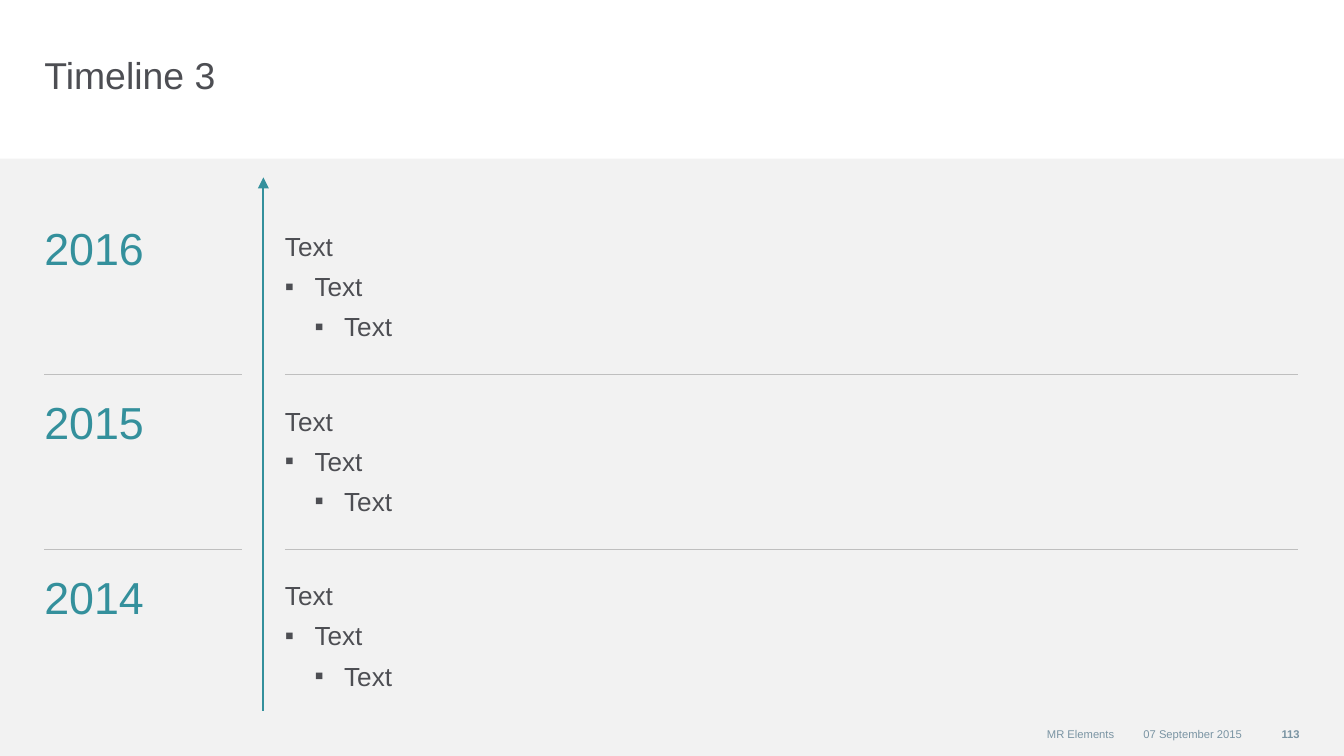
from lxml import etree
from pptx import Presentation
from pptx.dml.color import RGBColor
from pptx.enum.shapes import MSO_CONNECTOR, MSO_SHAPE
from pptx.enum.text import MSO_ANCHOR, MSO_AUTO_SIZE, PP_ALIGN
from pptx.oxml.ns import qn
from pptx.util import Inches, Pt

STRAIGHT = MSO_CONNECTOR.STRAIGHT
RECTANGLE = MSO_SHAPE.RECTANGLE
TOP, MIDDLE = MSO_ANCHOR.TOP, MSO_ANCHOR.MIDDLE
LEFT, RIGHT = PP_ALIGN.LEFT, PP_ALIGN.RIGHT
NO_FIT = MSO_AUTO_SIZE.NONE

WHITE = RGBColor(0xFF, 0xFF, 0xFF)
PANEL = RGBColor(0xF2, 0xF2, 0xF2)
INK = RGBColor(0x4D, 0x4E, 0x53)
TEAL = RGBColor(0x34, 0x90, 0x9C)
RULE = RGBColor(0xBF, 0xBF, 0xBF)
FOOTER = RGBColor(0x7A, 0x94, 0xA3)

WIDTH = 10
HEIGHT = WIDTH * 9 / 16
MARGIN, RIGHT_EDGE = 0.33, 9.66
LIST_LEFT, AXIS = 2.12, 1.96
FIRST_ROW, ROW_PITCH, ROW_HEIGHT = 1.59, 1.3, 1.1
INDENT = 0.22
YEARS = ["2016", "2015", "2014"]
ENTRY = ["Text", "Text", "Text"]
LIST_SLOTS = [1, 2, 3]
SPARE_SLOT = 4
COMPARISON_LAYOUT = 4


class TimelineSlide:
    font = "Arial"

    def __init__(self, slide):
        self.slide = slide
        self.slide.background.fill.solid()
        self.slide.background.fill.fore_color.rgb = WHITE

    def place(self, shape, box, insets, anchor=TOP):
        shape.left, shape.top, shape.width, shape.height = map(Inches, box)
        frame = shape.text_frame
        frame.word_wrap = True
        frame.auto_size = NO_FIT
        frame.vertical_anchor = anchor
        (frame.margin_left, frame.margin_top,
         frame.margin_right, frame.margin_bottom) = map(Inches, insets)
        return frame

    def style(self, paragraph, size, color, align=LEFT, bold=False):
        paragraph.alignment = align
        for run in paragraph.runs:
            run.font.name = self.font
            run.font.size = Pt(size)
            run.font.bold = bold
            run.font.color.rgb = color

    def panel(self, box, color):
        panel = self.slide.shapes.add_shape(RECTANGLE, *map(Inches, box))
        panel.shadow.inherit = False
        panel.fill.solid()
        panel.fill.fore_color.rgb = color
        panel.line.fill.background()
        self.slide.shapes._spTree.insert(2, panel._element)

    def title(self, text, box):
        frame = self.place(self.slide.shapes.title, box, (0, 0, 0, 0))
        frame.text = text
        paragraph = frame.paragraphs[0]
        paragraph.line_spacing = 1.0
        paragraph.space_before = Pt(0)
        self.style(paragraph, 20, INK)

    def label(self, text, box, size, color, insets=(0, 0, 0, 0),
              anchor=TOP, align=LEFT, bold=False):
        shape = self.slide.shapes.add_textbox(*map(Inches, box))
        frame = self.place(shape, box, insets, anchor)
        frame.text = text
        self.style(frame.paragraphs[0], size, color, align, bold)

    def bullets(self, slot, lines, box):
        frame = self.place(self.slide.placeholders[slot], box, (0, 0.1, 0, 0))
        frame.text = "\n".join(lines)
        for depth, paragraph in enumerate(frame.paragraphs):
            paragraph.line_spacing = 1.1
            paragraph.space_before = Pt(0)
            paragraph.space_after = Pt(3)
            properties = paragraph._p.get_or_add_pPr()
            properties.set("marL", str(Inches(depth * INDENT)))
            properties.set("indent", str(Inches(-INDENT if depth else 0)))
            if depth:
                etree.SubElement(properties, qn("a:buFont"), typeface=self.font)
                etree.SubElement(properties, qn("a:buChar"), char="▪")
            else:
                etree.SubElement(properties, qn("a:buNone"))
            self.style(paragraph, 14, INK)

    def line(self, start, end, color, width, arrow=False):
        line = self.slide.shapes.add_connector(
            STRAIGHT, *map(Inches, (*start, *end)))
        line.line.color.rgb = color
        line.line.width = Pt(width)
        if arrow:
            etree.SubElement(line.line._get_or_add_ln(), qn("a:tailEnd"),
                             type="triangle")
        etree.SubElement(line._element.spPr, qn("a:effectLst"))

    def remove_placeholder(self, slot):
        spare = self.slide.placeholders[slot]._element
        spare.getparent().remove(spare)


def main():
    deck = Presentation()
    deck.slide_width, deck.slide_height = Inches(WIDTH), Inches(HEIGHT)
    layout = deck.slide_layouts[COMPARISON_LAYOUT]
    timeline = TimelineSlide(deck.slides.add_slide(layout))

    timeline.panel((0, 1.18, WIDTH, HEIGHT - 1.18), PANEL)
    timeline.title("Timeline 3", (MARGIN, 0.39, 7.48, 0.61))

    for row, (year, slot) in enumerate(zip(YEARS, LIST_SLOTS)):
        top = FIRST_ROW + row * ROW_PITCH
        timeline.label(year, (MARGIN, top, 1.6, ROW_HEIGHT), 24, TEAL,
                       insets=(0, 0.05, 0.1, 0.05))
        timeline.bullets(slot, ENTRY, (LIST_LEFT, top,
                                       RIGHT_EDGE - LIST_LEFT, ROW_HEIGHT))
        if row:
            divider = top - 0.1
            for start, end in [(MARGIN, 1.8), (LIST_LEFT, RIGHT_EDGE)]:
                timeline.line((start, divider), (end, divider), RULE, 0.5)
    timeline.remove_placeholder(SPARE_SLOT)

    timeline.line((AXIS, 5.29), (AXIS, 1.32), TEAL, 1, arrow=True)

    for text, left, width, bold in [("MR Elements", 4.35, 3.94, False),
                                    ("07 September 2015", 8.33, 0.91, False),
                                    ("113", 9.24, 0.43, True)]:
        timeline.label(text, (left, 5.35, width, 0.22), 6, FOOTER,
                       anchor=MIDDLE, align=RIGHT, bold=bold)

    deck.save("out.pptx")


if __name__ == "__main__":
    main()
